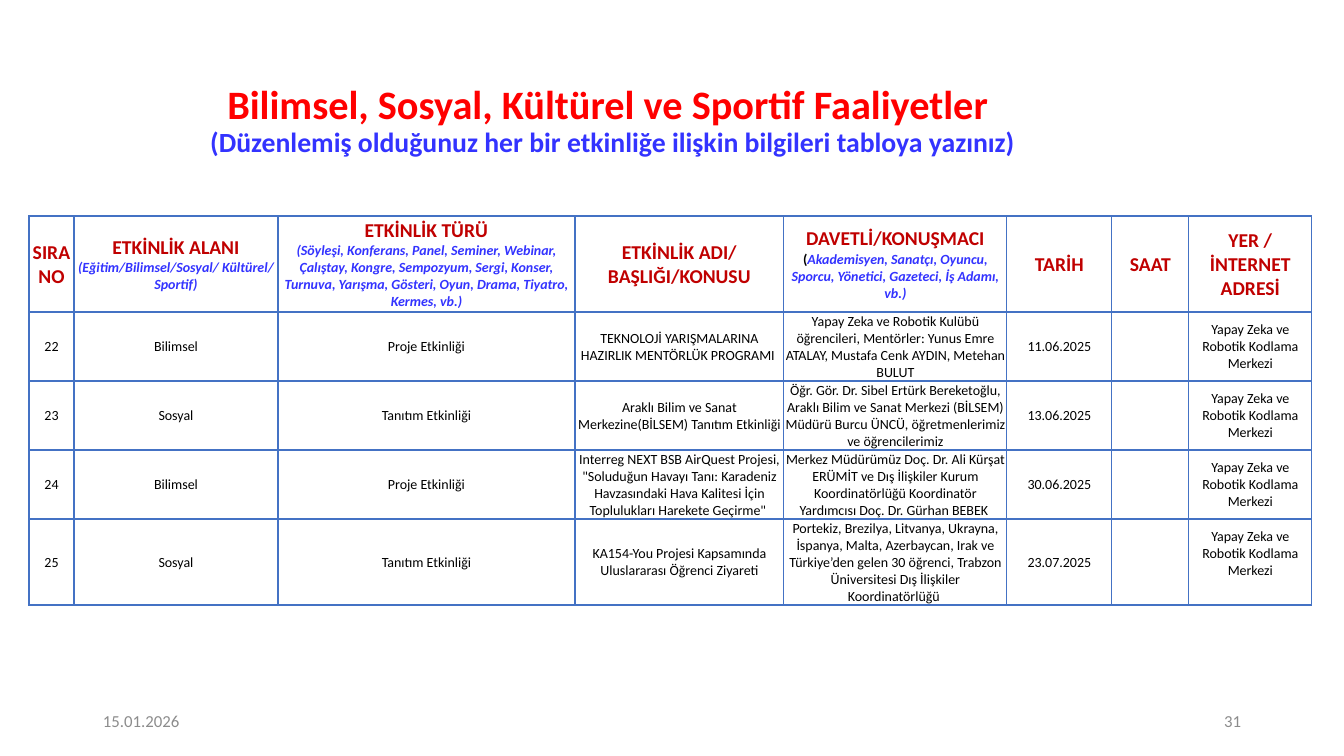
import pptx
import pptx.util
import pptx.dml.color
import pptx.enum.text
from pptx.oxml import parse_xml

PX = 914400 / 100.8
RGB = pptx.dml.color.RGBColor
RED = RGB(0xFF, 0x00, 0x00)
DARK_RED = RGB(0xC0, 0x00, 0x00)
BLUE = RGB(0x33, 0x33, 0xFF)
BLACK = RGB(0x00, 0x00, 0x00)
GREY = RGB(0x8C, 0x8C, 0x8C)
LINE = RGB(0x44, 0x72, 0xC4)
ALIGN = pptx.enum.text.PP_ALIGN
MIDDLE = pptx.enum.text.MSO_ANCHOR.MIDDLE
NS = "http://schemas.openxmlformats.org/drawingml/2006/main"

TITLE = {"size": 28.8, "bold": True, "color": RED}
SUBTITLE = {"size": 19.8, "bold": True, "color": BLUE}
HEAD = {"size": 14, "bold": True, "color": DARK_RED}
HINT = {"size": 10, "bold": True, "italic": True, "color": BLUE}
PAREN = {"size": 10, "bold": True, "color": BLACK}
BODY = {"size": 10, "bold": False, "color": BLACK}
FOOT = {"size": 12, "color": GREY}

COLS = [45, 204, 297, 209, 223, 105, 77, 123]
ROWS = [96, 68, 69, 69, 86]
PLACE = "Yapay Zeka ve Robotik Kodlama Merkezi"
HEADER = [
    [[("SIRA NO", HEAD)]],
    [[("ETKİNLİK ALANI ", HEAD),
      ("(Eğitim/Bilimsel/Sosyal/ Kültürel/ Sportif)", HINT)]],
    [[("ETKİNLİK TÜRÜ", HEAD)],
     [("(Söyleşi, Konferans, Panel, Seminer, Webinar, Çalıştay, Kongre, Sempozyum, "
       "Sergi, Konser, Turnuva, Yarışma, Gösteri, Oyun, Drama, Tiyatro, Kermes, vb.)", HINT)]],
    [[("ETKİNLİK ADI/ BAŞLIĞI/KONUSU", HEAD)]],
    [[("DAVETLİ/KONUŞMACI ", HEAD), ("(", PAREN),
      ("Akademisyen, Sanatçı, Oyuncu, Sporcu, Yönetici, Gazeteci, İş Adamı, vb.)", HINT)]],
    [[("TARİH", HEAD)]],
    [[("SAAT", HEAD)]],
    [[("YER / İNTERNET ADRESİ", HEAD)]],
]
EVENTS = [
    ("22", "Bilimsel", "Proje Etkinliği",
     "TEKNOLOJİ YARIŞMALARINA HAZIRLIK MENTÖRLÜK PROGRAMI ",
     "Yapay Zeka ve Robotik Kulübü öğrencileri, Mentörler: Yunus Emre ATALAY, "
     "Mustafa Cenk AYDIN, Metehan BULUT", "11.06.2025"),
    ("23", "Sosyal", "Tanıtım Etkinliği",
     "Araklı Bilim ve Sanat Merkezine(BİLSEM) Tanıtım Etkinliği",
     "Öğr. Gör. Dr. Sibel Ertürk Bereketoğlu, Araklı Bilim ve Sanat Merkezi (BİLSEM) "
     "Müdürü Burcu ÜNCÜ, öğretmenlerimiz ve öğrencilerimiz", "13.06.2025"),
    ("24", "Bilimsel", "Proje Etkinliği",
     'Interreg NEXT BSB AirQuest Projesi, "Soluduğun Havayı Tanı: Karadeniz '
     'Havzasındaki Hava Kalitesi İçin Toplulukları Harekete Geçirme" ',
     "Merkez Müdürümüz Doç. Dr. Ali Kürşat ERÜMİT ve Dış İlişkiler Kurum "
     "Koordinatörlüğü Koordinatör Yardımcısı Doç. Dr. Gürhan BEBEK ", "30.06.2025"),
    ("25", "Sosyal", "Tanıtım Etkinliği",
     "KA154-You Projesi Kapsamında Uluslararası Öğrenci Ziyareti",
     "Portekiz, Brezilya, Litvanya, Ukrayna, İspanya, Malta, Azerbaycan, Irak ve "
     "Türkiye’den gelen 30 öğrenci, Trabzon Üniversitesi Dış İlişkiler "
     "Koordinatörlüğü ", "23.07.2025"),
]


def px(n):
    """Turn pixels into EMU."""
    return pptx.util.Emu(round(n * PX))


def add_run(p, text, style):
    """Add a run to a paragraph with the given format values."""
    r = p.add_run()
    r.text = text
    r.font.name = "Calibri"
    for key, value in style.items():
        if key == "color":
            r.font.color.rgb = value
        else:
            setattr(r.font, key, pptx.util.Pt(value) if key == "size" else value)


def add_title(s, x, y, w, h):
    """Place the two-line title in its placeholder."""
    sp = s.shapes.title
    for key, value in {"left": x, "top": y, "width": w, "height": h}.items():
        setattr(sp, key, px(value))
    tf = sp.text_frame
    tf.word_wrap = True
    tf.vertical_anchor = MIDDLE
    p = tf.paragraphs[0]
    p.alignment = ALIGN.CENTER
    p.line_spacing = 0.9
    add_run(p, "Bilimsel, Sosyal, Kültürel ve Sportif Faaliyetler ", TITLE)
    p.add_line_break()
    add_run(p, "(Düzenlemiş olduğunuz her bir etkinliğe ilişkin bilgileri tabloya yazınız)",
            SUBTITLE)


def fill_cell(cell, paragraphs):
    """Write a cell's paragraphs and give it margins and borders."""
    margins = {"margin_left": 1, "margin_right": 1, "margin_top": 1, "margin_bottom": 0}
    for key, value in margins.items():
        setattr(cell, key, px(value))
    cell.vertical_anchor = MIDDLE
    tf = cell.text_frame
    for i, runs in enumerate(paragraphs):
        p = tf.add_paragraph() if i else tf.paragraphs[0]
        p.alignment = ALIGN.CENTER
        for text, style in runs:
            add_run(p, text, style)
    tcPr = cell._tc.get_or_add_tcPr()
    for side in ("lnL", "lnR", "lnT", "lnB"):
        tcPr.append(parse_xml(
            f'<a:{side} xmlns:a="{NS}" w="12700"><a:solidFill>'
            f'<a:srgbClr val="{LINE}"/></a:solidFill></a:{side}>'))
    cell.fill.background()


def add_events(s, x, y):
    """Place the table of events with its corner at the given point."""
    rows = [HEADER]
    for event in EVENTS:
        rows.append([[[(t, BODY)]] if t else [] for t in (*event, "", PLACE)])
    table = s.shapes.add_table(len(ROWS), len(COLS), px(x), px(y),
                               px(sum(COLS)), px(sum(ROWS))).table
    table.first_row = table.horz_banding = False
    for col, width in zip(table.columns, COLS):
        col.width = px(width)
    for row, height, contents in zip(table.rows, ROWS, rows):
        row.height = px(height)
        for cell, paragraphs in zip(row.cells, contents):
            fill_cell(cell, paragraphs)
    table.cell(len(ROWS) - 1, len(COLS) - 1).margin_bottom = px(17)


def add_footer(s, x, y, w, h, text, alignment):
    """Place one footer text."""
    tf = s.shapes.add_textbox(px(x), px(y), px(w), px(h)).text_frame
    tf.word_wrap = True
    tf.vertical_anchor = MIDDLE
    p = tf.paragraphs[0]
    p.alignment = alignment
    add_run(p, text, FOOT)


def main():
    """Build the slide and save it."""
    prs = pptx.Presentation()
    prs.slide_width, prs.slide_height = px(1344), px(756)
    s = prs.slides.add_slide(prs.slide_layouts[5])
    add_title(s, 39, 77, 1147, 89)
    add_events(s, 29, 216)
    add_footer(s, 93, 701, 302, 40, "15.01.2026", ALIGN.LEFT)
    add_footer(s, 949, 701, 302, 40, "31", ALIGN.RIGHT)
    prs.save("out.pptx")


if __name__ == "__main__":
    main()
